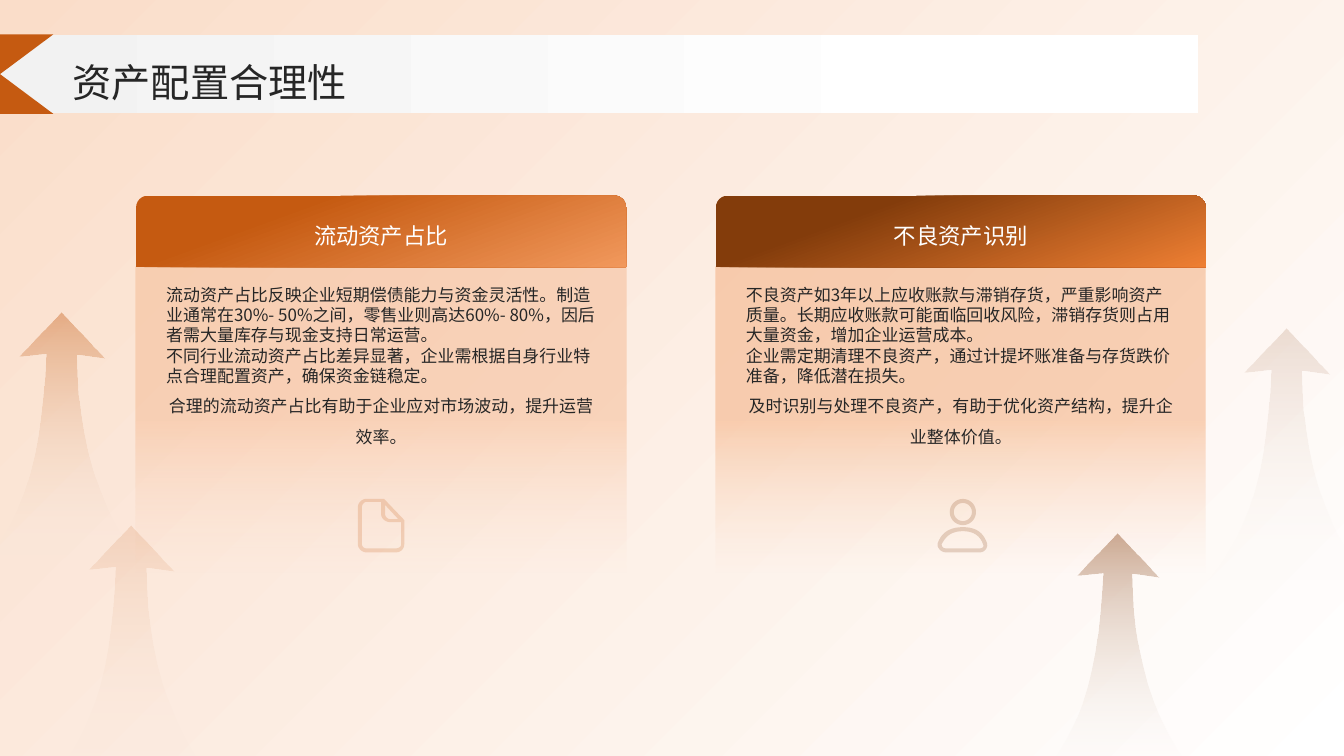
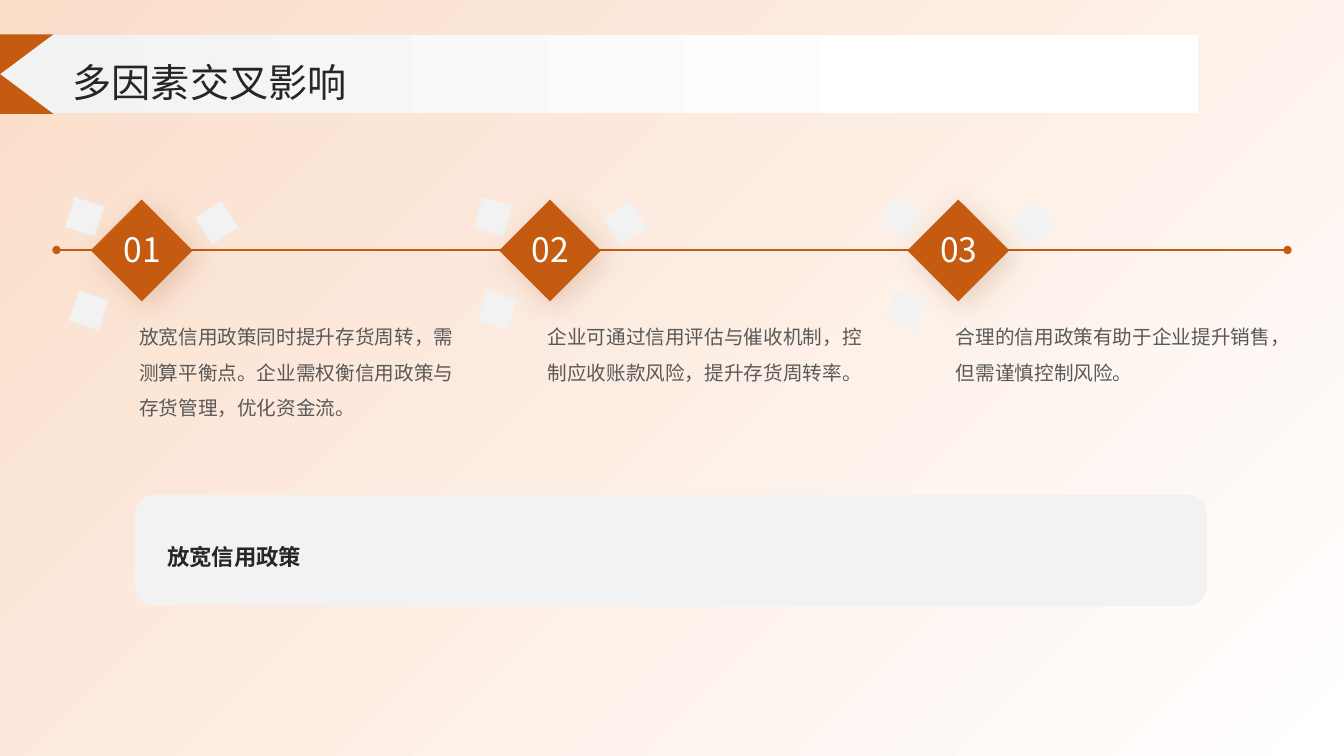
import math

from lxml import etree
from pptx import Presentation
from pptx import util as u
from pptx.dml.color import RGBColor
from pptx.enum import shapes, text
from pptx.oxml.ns import qn

FONT = "Noto Sans CJK SC"
C = {
    "white": "FFFFFF", "peach": "FADDC9", "orange": "C55A11", "brown": "833C0B",
    "pale": "F2F2F2", "ink": "262626", "grey": "595959", "shadow": "94430D",
    "apricot": "F6BA92", "salmon": "F1985C", "sand": "F4AA77", "cream": "F9D4BB",
    "amber": "EE7F33",
}
SHAPE = shapes.MSO_SHAPE
LEFT, CENTER = text.PP_ALIGN.LEFT, text.PP_ALIGN.CENTER
TOP, MIDDLE = text.MSO_ANCHOR.TOP, text.MSO_ANCHOR.MIDDLE


# ---- Drawing helpers ----
def sub(parent, tag, **attrs):
    return etree.SubElement(parent, qn(tag), {k: str(v) for k, v in attrs.items()})


def add_color(parent, color, alpha=100):
    clr = sub(parent, "a:srgbClr", val=C[color])
    if alpha < 100:
        sub(clr, "a:alpha", val=alpha * 1000)


def paint(sp, fill):
    """Fill is a colour name, (colour, alpha), or (list of stops, angle)."""
    sp.shadow.inherit = False
    sp.line.fill.background()
    if isinstance(fill, tuple) and isinstance(fill[0], list):
        stops, angle = fill
        sp.fill.gradient()
        grad = sp._element.spPr.find(qn("a:gradFill"))
        for child in list(grad):
            grad.remove(child)
        gs_list = sub(grad, "a:gsLst")
        for pos, *color in stops:
            add_color(sub(gs_list, "a:gs", pos=pos * 1000), *color)
        sub(grad, "a:lin", ang=angle * 60000, scaled=0)
        return
    color, alpha = fill if isinstance(fill, tuple) else (fill, 100)
    sp.fill.solid()
    sp.fill.fore_color.rgb = RGBColor.from_string(C[color])
    if alpha < 100:
        clr = sp._element.spPr.find(qn("a:solidFill"))[0]
        sub(clr, "a:alpha", val=alpha * 1000)


def add_box(s, kind, x, y, w, h, fill, adj=(), rot=0):
    sp = s.shapes.add_shape(kind, *map(u.Inches, (x, y, w, h)))
    for i, value in enumerate(adj):
        sp.adjustments[i] = value
    sp.rotation = rot
    paint(sp, fill)
    return sp


def add_text(s, x, y, w, h, paragraphs, size, color, anchor=TOP, inset=True, bold=False):
    """Paragraphs are (text, alignment, line spacing)."""
    tf = s.shapes.add_textbox(*map(u.Inches, (x, y, w, h))).text_frame
    tf.word_wrap = True
    tf.vertical_anchor = anchor
    if not inset:
        tf.margin_left = tf.margin_top = tf.margin_right = tf.margin_bottom = 0
    for i, (line, align, spacing) in enumerate(paragraphs):
        p = tf.add_paragraph() if i else tf.paragraphs[0]
        p.text, p.alignment, p.line_spacing = line, align, spacing
        for r in p.runs:
            r.font.size, r.font.name, r.font.bold = u.Pt(size), FONT, bold
            r.font.color.rgb = RGBColor.from_string(C[color])
            sub(r.font._element, "a:ea", typeface=FONT)


def flatten(contour, steps=12):
    """Turn (x, y) points and (x1, y1, x2, y2, x, y) curves into points."""
    pts = []
    for seg in contour:
        if len(seg) == 2:
            pts.append(seg)
            continue
        quad = (pts[-1], seg[:2], seg[2:4], seg[4:])
        for n in range(1, steps + 1):
            t = n / steps
            weights = ((1 - t) ** 3, 3 * t * (1 - t) ** 2, 3 * t * t * (1 - t), t ** 3)
            pts.append(tuple(sum(k * q[a] for k, q in zip(weights, quad)) for a in (0, 1)))
    return pts


def add_outline(s, x, y, contours, fill, scale=1):
    fb = None
    for contour in contours:
        pts = [(u.Inches(x + a * scale), u.Inches(y + b * scale)) for a, b in flatten(contour)]
        if fb is None:
            fb = s.shapes.build_freeform(*pts[0])
        else:
            fb.move_to(*pts[0])
        fb.add_line_segments(pts[1:], close=True)
    paint(fb.convert_to_shape(), fill)


def circle(cx, cy, radius, n=40):
    return [(cx + radius * math.cos(2 * math.pi * i / n),
             cy + radius * math.sin(2 * math.pi * i / n)) for i in range(n)]


# ---- Outlines, in inches from their own corner ----
ARROW = [[(.85, 0), (1.28, .46), (1, .42), (1, 1.19, 1.19, 1.97, 1.71, 2.58),
          (0, 2.57), (.54, 2.01, .66, 1.27, .7, .41), (.43, .44)]]
PERSON = [
    circle(.25, .13, .13), circle(.25, .13, .09),
    [(.25, .28), (.09, .28, .03, .36, 0, .44), (-.01, .48, .03, .53, .08, .53), (.42, .53),
     (.47, .53, .5, .48, .49, .44), (.46, .36, .41, .28, .25, .28)],
    [(.25, .32), (.12, .32, .07, .39, .04, .45), (.04, .47, .05, .49, .08, .49), (.42, .49),
     (.45, .49, .46, .47, .45, .45), (.43, .39, .38, .32, .25, .32)],
]
DOCUMENT = [
    [(.08, 0), (.26, 0), (.46, .21), (.46, .45), (.46, .49, .43, .53, .38, .53), (.08, .53),
     (.04, .53, 0, .49, 0, .45), (0, .08), (0, .04, .04, 0, .08, 0)],
    [(.27, .06), (.4, .2), (.32, .2), (.29, .2, .27, .17, .27, .15)],
    [(.43, .45), (.43, .47, .41, .49, .38, .49), (.08, .49), (.06, .49, .04, .47, .04, .45),
     (.04, .08), (.04, .06, .06, .03, .08, .03), (.23, .03), (.23, .15),
     (.23, .19, .27, .23, .32, .23), (.43, .23)],
]


# ---- Shared background and title band ----
def add_base(prs, title):
    s = prs.slides.add_slide(prs.slide_layouts[6])
    add_box(s, SHAPE.RECTANGLE, 0, 0, 13.33, 7.5, ([(0, "white"), (100, "peach")], 225))
    add_box(s, SHAPE.RECTANGLE, 0, .35, 11.88, .77, ([(0, "pale"), (80, "white")], 0))
    add_box(s, SHAPE.FLOWCHART_COLLATE, -.53, .34, 1.06, .79, "orange")
    add_text(s, .72, .53, 11.88, .51, [(title, LEFT, 1.1)], 28, "ink", MIDDLE, inset=False)
    return s


# ---- Asset cards ----
def add_card(s, x, y, heading, lines, head_colors, body_colors, icon):
    w, head_h = 4.86, .71
    top, bottom = body_colors
    add_box(s, SHAPE.RECTANGLE, x, y + head_h, w, 3.03,
            ([(50, top, 50), (100, bottom, 0)], 90))
    add_box(s, SHAPE.ROUND_2_SAME_RECTANGLE, x, y, w, head_h,
            ([(28, head_colors[0]), (100, head_colors[1])], 70), adj=(.167, 0))
    *first, last = lines
    body = [(line, LEFT, 1.0) for line in first] + [(last, CENTER, 1.5)]
    add_text(s, x + .2, y + .83, w - .4, 2.08, body, 12.1, "ink")
    add_text(s, x + .2, y, w - .4, head_h, [(heading, CENTER, 1.3)], 16, "white", MIDDLE)
    add_outline(s, x + 2.2, y + 3.01, icon, (head_colors[0], 20))


def build_assets(prs):
    s = add_base(prs, "资产配置合理性")
    add_card(s, 1.35, 1.94, "流动资产占比", [
        "流动资产占比反映企业短期偿债能力与资金灵活性。制造业通常在30%- 50%之间，零售业则高达60%- 80%，因后者需大量库存与现金支持日常运营。",
        "不同行业流动资产占比差异显著，企业需根据自身行业特点合理配置资产，确保资金链稳定。",
        "合理的流动资产占比有助于企业应对市场波动，提升运营效率。",
    ], ("orange", "salmon"), ("apricot", "peach"), DOCUMENT)
    add_card(s, 7.1, 1.94, "不良资产识别", [
        "不良资产如3年以上应收账款与滞销存货，严重影响资产质量。长期应收账款可能面临回收风险，滞销存货则占用大量资金，增加企业运营成本。",
        "企业需定期清理不良资产，通过计提坏账准备与存货跌价准备，降低潜在损失。",
        "及时识别与处理不良资产，有助于优化资产结构，提升企业整体价值。",
    ], ("brown", "amber"), ("sand", "cream"), PERSON)
    # Fading arrows
    for x, y, scale, color, alpha in [
        (10.27, 5.29, .955, "brown", 40), (11.91, 3.26, 1, "brown", 15),
        (-.24, 3.1, 1, "orange", 40), (.45, 5.21, 1, "orange", 15),
    ]:
        add_outline(s, x, y, ARROW, ([(0, color, alpha), (100, "white", 0)], 90), scale)


# ---- Timeline of factors ----
def add_axis(s, x1, x2, y):
    line = s.shapes.add_connector(shapes.MSO_CONNECTOR.STRAIGHT,
                                  *map(u.Inches, (x1, y, x2, y)))
    line.line.width = u.Pt(1.5)
    line.line.color.rgb = RGBColor.from_string(C["orange"])
    ln = line.line._get_or_add_ln()
    sub(ln, "a:headEnd", type="oval")
    sub(ln, "a:tailEnd", type="oval")
    sub(line._element.spPr, "a:effectLst")


def add_step(s, x, y, number, body):
    # Small tilted squares around the main diamond
    for dx, dy, rot in [(-.28, -.05, 62.8), (-.24, .88, 62.8), (1.03, .01, 282.2)]:
        add_box(s, SHAPE.DIAMOND, x + dx, y + dy, .44, .44, "pale", rot=rot)
    sp = add_box(s, SHAPE.DIAMOND, x, y, 1.01, 1.01, "orange")
    shadow = sub(sp._element.spPr.find(qn("a:effectLst")), "a:outerShdw",
                 blurRad=u.Pt(20), dist=u.Pt(6), dir=45 * 60000, algn="ctr", rotWithShape=0)
    add_color(shadow, "shadow", 20)
    add_text(s, x + .13, y + .22, .76, .51, [(number, CENTER, 1.1)], 24, "white", MIDDLE,
             inset=False)
    add_text(s, x + .48, y + 1.13, 3.15, 1.71, [(body, LEFT, 1.5)], 14, "grey", inset=False)


def build_factors(prs):
    s = add_base(prs, "多因素交叉影响")
    add_axis(s, .56, 12.77, 2.48)
    steps = [
        "放宽信用政策同时提升存货周转，需测算平衡点。企业需权衡信用政策与存货管理，优化资金流。",
        "企业可通过信用评估与催收机制，控制应收账款风险，提升存货周转率。",
        "合理的信用政策有助于企业提升销售，但需谨慎控制风险。",
    ]
    for i, body in enumerate(steps):
        add_step(s, .9 + 4.05 * i, 1.98, f"{i + 1:02}", body)
    # Summary panel
    add_box(s, SHAPE.ROUNDED_RECTANGLE, 1.34, 4.91, 10.63, 1.1, "pale", adj=(.17,))
    add_text(s, 1.66, 5.08, 10, .77, [("放宽信用政策", LEFT, 1.4)], 16, "ink", MIDDLE,
             inset=False, bold=True)


def main():
    prs = Presentation()
    prs.slide_width, prs.slide_height = u.Inches(13.33), u.Inches(7.5)
    build_assets(prs)
    build_factors(prs)
    prs.save("out.pptx")


if __name__ == "__main__":
    main()
